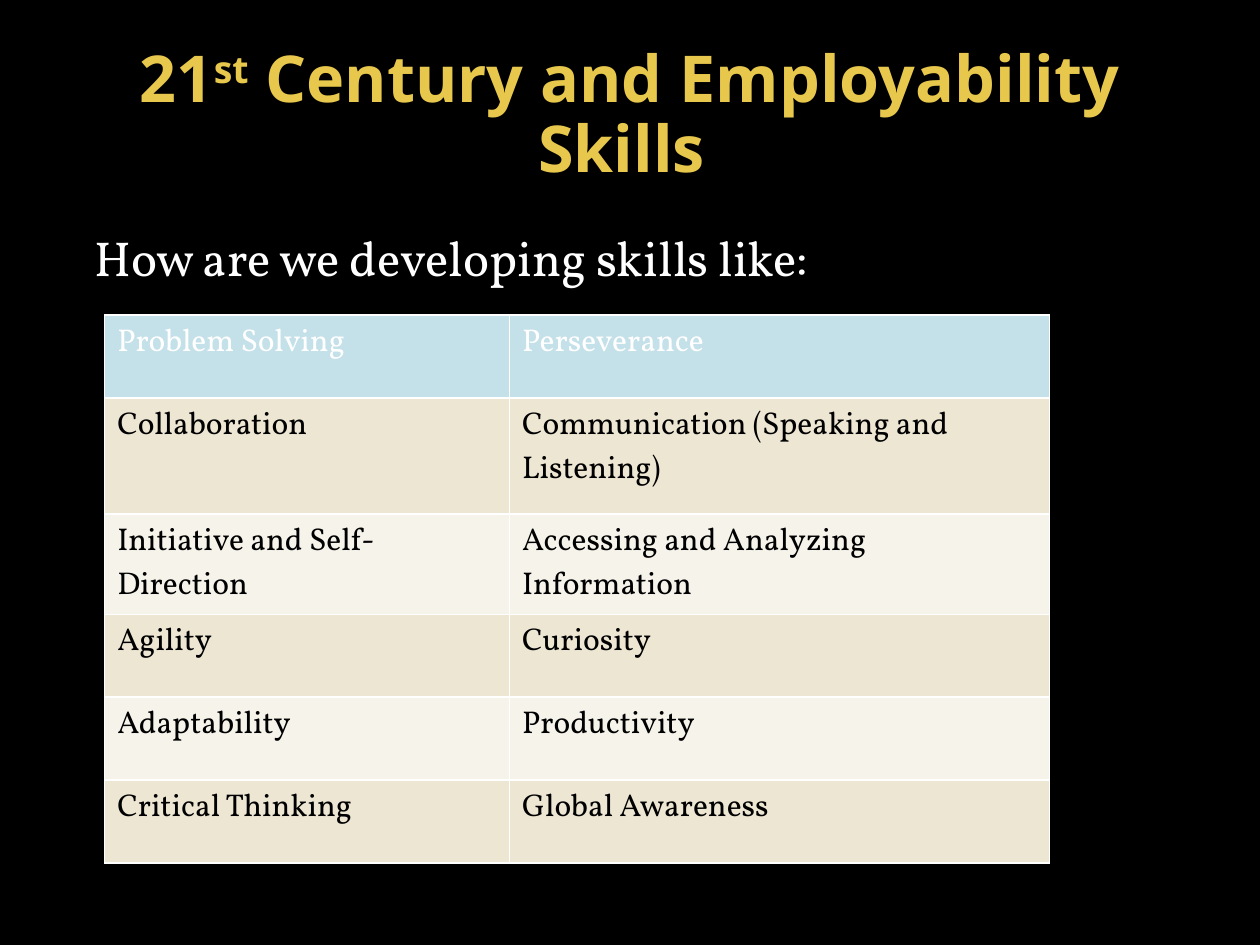
from lxml.etree import SubElement
from pptx import Presentation
from pptx.dml.color import RGBColor
from pptx.enum.text import MSO_ANCHOR, MSO_AUTO_SIZE, PP_ALIGN
from pptx.oxml.ns import qn
from pptx.util import Cm, Pt

TITLE = [("21", 0), ("st", 30000), (" Century and Employability Skills ", 0)]
LEAD = "How are we developing skills like:"
SKILLS = [
    ("Problem Solving", "Perseverance"),
    ("Collaboration", "Communication (Speaking and Listening)"),
    ("Initiative and Self-Direction", "Accessing and Analyzing Information"),
    ("Agility", "Curiosity"),
    ("Adaptability", "Productivity"),
    ("Critical Thinking", "Global Awareness"),
]
WIDTHS = [8.16, 10.89]
HEIGHTS = [1.67, 2.34, 1.67, 1.67, 1.67, 1.67]
COLORS = {"back": "000000", "title": "E8C84C", "light": "FFFFFF", "dark": "000000",
          "head": "C4E0E9", "odd": "EDE6D3", "even": "F6F3EA"}


def color(name):
    return RGBColor.from_string(COLORS[name])


def write(para, text, font="Vollkorn", size=18, ink="dark", bold=False, raised=0):
    """Add one run to a paragraph; raised is the superscript offset in 1/1000 %."""
    run = para.add_run()
    run.text = text
    run.font.name, run.font.size, run.font.bold = font, Pt(size), bold
    run.font.color.rgb = color(ink)
    if raised:
        run.font._element.set("baseline", str(raised))


def place(shape, left, top, width, height):
    shape.left, shape.top = Cm(left), Cm(top)
    shape.width, shape.height = Cm(width), Cm(height)
    shape.text_frame.word_wrap = True
    shape.text_frame.auto_size = MSO_AUTO_SIZE.NONE
    return shape.text_frame


def border(cell, bottom):
    """Draw white sides; borders must precede the fill in the cell properties."""
    props = cell._tc.get_or_add_tcPr()
    for side, width in (("L", 1), ("R", 1), ("T", 1), ("B", bottom)):
        line = SubElement(props, qn("a:ln" + side), w=str(Pt(width)))
        fill = SubElement(line, qn("a:solidFill"))
        SubElement(fill, qn("a:srgbClr"), val=COLORS["light"])


def add_skills(slide):
    frame = slide.shapes.add_table(len(SKILLS), len(WIDTHS), Cm(2.11), Cm(6.35),
                                   Cm(sum(WIDTHS)), Cm(sum(HEIGHTS)))
    table = frame.table
    for col, width in zip(table.columns, WIDTHS):
        col.width = Cm(width)
    for i, (row, height, words) in enumerate(zip(table.rows, HEIGHTS, SKILLS)):
        row.height = Cm(height)
        shade = "head" if i == 0 else "odd" if i % 2 else "even"
        for cell, text in zip(row.cells, words):
            border(cell, bottom=1)
            cell.fill.solid()
            cell.fill.fore_color.rgb = color(shade)
            write(cell.text_frame.paragraphs[0], text, ink="dark" if i else "light")


def main():
    deck = Presentation()
    deck.slide_width, deck.slide_height = Cm(25.4), Cm(19.05)
    slide = deck.slides.add_slide(deck.slide_layouts[1])
    slide.background.fill.solid()
    slide.background.fill.fore_color.rgb = color("back")

    frame = place(slide.shapes.title, 1.27, 0.76, 22.86, 3.18)
    frame.vertical_anchor = MSO_ANCHOR.MIDDLE
    para = frame.paragraphs[0]
    para.alignment, para.line_spacing = PP_ALIGN.CENTER, 0.9
    for text, raised in TITLE:
        write(para, text, font="Noto Sans", size=36.9, ink="title", bold=True, raised=raised)

    frame = place(slide.placeholders[1], 1.27, 4.45, 22.86, 13.08)
    para = frame.paragraphs[0]
    props = para._p.get_or_add_pPr()
    props.set("marL", str(Cm(1.52)))
    props.set("indent", str(Cm(-1.14)))
    SubElement(props, qn("a:buNone"))
    write(para, LEAD, size=28, ink="light")

    add_skills(slide)
    deck.save("out.pptx")


if __name__ == "__main__":
    main()
